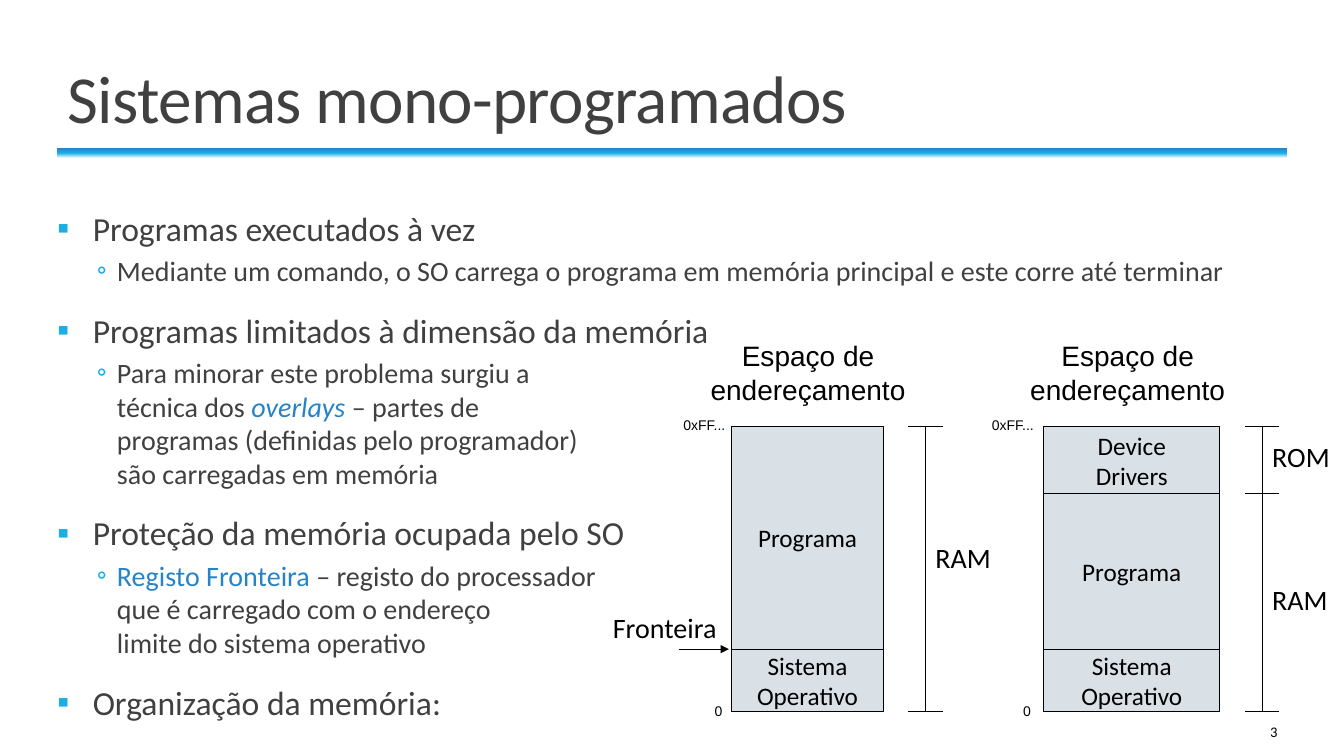
from copy import deepcopy
from dataclasses import dataclass

from pptx import Presentation
from pptx.dml.color import RGBColor
from pptx.enum import shapes, text
from pptx.oxml.ns import qn
from pptx.util import Emu, Inches, Pt


@dataclass(frozen=True)
class Theme:
    body: str = "404040"
    ink: str = "000000"
    accent: str = "1CADE4"
    strong: str = "2683C6"
    block: str = "D9E0E6"
    white: str = "FFFFFF"
    font: str = "Calibri"
    label_font: str = "Arial"
    title: float = 48
    item: float = 24
    sub: float = 20
    label: float = 20
    block_size: float = 18
    number: float = 10.5
    address: float = 10
    line: float = 0.75


T = Theme()
LEFT, CENTER, RIGHT = text.PP_ALIGN.LEFT, text.PP_ALIGN.CENTER, text.PP_ALIGN.RIGHT
MIDDLE = text.MSO_ANCHOR.MIDDLE


def rgb(color):
    return RGBColor.from_string(color)


def add_text(p, content, size=T.label, color=T.ink, font=T.font, italic=False, spacing=0):
    """Append formatted text to a paragraph, with a line break at each newline."""
    for i, part in enumerate(content.split("\n")):
        if i:
            p.add_line_break()
        r = p.add_run()
        r.text = part
        r.font.size, r.font.name, r.font.italic = Pt(size), font, italic
        r.font.color.rgb = rgb(color)
        if spacing:
            r._r.get_or_add_rPr().set("spc", str(int(spacing * 100)))


class SlideBuilder:
    def __init__(self, prs, theme):
        self.theme = theme
        self.s = prs.slides.add_slide(prs.slide_layouts[1])

    def place(self, sp, x, y, w, h):
        sp.left, sp.top, sp.width, sp.height = map(Inches, (x, y, w, h))
        sp.text_frame.auto_size = text.MSO_AUTO_SIZE.NONE
        return sp.text_frame

    def title(self, content, *box):
        tf = self.place(self.s.shapes.title, *box)
        tf.vertical_anchor = text.MSO_ANCHOR.BOTTOM
        p = tf.paragraphs[0]
        p.alignment, p.line_spacing = LEFT, 0.85
        add_text(p, content, self.theme.title, self.theme.body, spacing=-0.5)

    def bullets(self, items, *box):
        """items: (level, [(text, format), ...])"""
        t = self.theme
        tf = self.place(self.s.placeholders[1], *box)
        tf.margin_left = tf.margin_right = 0
        tf.vertical_anchor = text.MSO_ANCHOR.TOP
        # size, left margin, hanging indent, space before, space after, bullet
        levels = [(t.item, 0.35, 0.35, 12, 2, "▪"), (t.sub, 0.59, 0.2, 2, 4, "◦")]
        for i, (level, runs) in enumerate(items):
            p = tf.add_paragraph() if i else tf.paragraphs[0]
            size, margin, hang, before, after, mark = levels[level]
            p.level, p.alignment = level, LEFT
            p.space_before, p.space_after = Pt(before), Pt(after)
            pPr = p._p.get_or_add_pPr()
            pPr.set("marL", str(Inches(margin)))
            pPr.set("indent", str(-Inches(hang)))
            clr = pPr.makeelement(qn("a:buClr"), {})
            clr.append(clr.makeelement(qn("a:srgbClr"), {"val": t.accent}))
            pPr.append(clr)
            pPr.append(pPr.makeelement(qn("a:buFont"), {"typeface": t.font}))
            pPr.append(pPr.makeelement(qn("a:buChar"), {"char": mark}))
            for content, fmt in runs:
                add_text(p, content, **{"size": size, "color": t.body, **fmt})

    def rect(self, x, y, w, h):
        sp = self.s.shapes.add_shape(shapes.MSO_SHAPE.RECTANGLE, *map(Inches, (x, y, w, h)))
        sp.shadow.inherit = False
        return sp

    def rule(self, *box):
        sp = self.rect(*box)
        sp.line.fill.background()
        sp.fill.gradient()
        sp.fill.gradient_angle = 90
        first = sp.fill._fill._gradFill.find(qn("a:gsLst"))[0]
        first.addnext(deepcopy(first))
        colors = (self.theme.white, self.theme.accent, self.theme.strong)
        for i, (stop, color) in enumerate(zip(sp.fill.gradient_stops, colors)):
            stop.position = i / 2
            stop.color.rgb = rgb(color)

    def block(self, content, *box):
        sp = self.rect(*box)
        sp.fill.solid()
        sp.fill.fore_color.rgb = rgb(self.theme.block)
        sp.line.color.rgb, sp.line.width = rgb(self.theme.ink), Pt(self.theme.line)
        tf = sp.text_frame
        tf.word_wrap, tf.vertical_anchor = False, MIDDLE
        tf.paragraphs[0].alignment = CENTER
        add_text(tf.paragraphs[0], content, self.theme.block_size)

    def label(self, content, x, y, w, h, align=LEFT, wrap=True, anchor=text.MSO_ANCHOR.TOP, **fmt):
        tf = self.s.shapes.add_textbox(*map(Inches, (x, y, w, h))).text_frame
        tf.word_wrap, tf.vertical_anchor = wrap, anchor
        tf.paragraphs[0].alignment = align
        add_text(tf.paragraphs[0], content, **fmt)

    def line(self, x1, y1, x2, y2, arrow=False):
        c = self.s.shapes.add_connector(shapes.MSO_CONNECTOR.STRAIGHT, *map(Inches, (x1, y1, x2, y2)))
        c.line.color.rgb, c.line.width = rgb(self.theme.ink), Pt(self.theme.line)
        if arrow:
            ln = c.line._get_or_add_ln()
            ln.append(ln.makeelement(qn("a:tailEnd"), {"type": "triangle"}))
        spPr = c._element.spPr
        spPr.append(spPr.makeelement(qn("a:effectLst"), {}))

    def memory_map(self, x, w, heading_x, address_x, scale_x, blocks, spans):
        """blocks: (text, top, bottom); spans: (text, label top, top, bottom)."""
        t = self.theme
        self.label("Espaço de endereçamento", heading_x, 3.31, 2.67, 0.77, CENTER, font=t.label_font)
        for content, top, bottom in blocks:
            self.block(content, x, top, w, bottom - top)
        # Scale with a tick at each boundary
        edges = sorted({y for span in spans for y in span[2:]})
        self.line(scale_x, edges[0], scale_x, edges[-1])
        for y in edges:
            self.line(scale_x - 0.17, y, scale_x + 0.17, y)
        for content, label_y, _, _ in spans:
            self.label(content, scale_x, label_y, 1, 0.43)
        # First and last address
        for content, dx, y, width in (("0xFF...", 0, 4.08, 0.64), ("0", 0.31, 6.92, 0.28)):
            self.label(content, address_x + dx, y, width, 0.27, wrap=False,
                       size=t.address, font=t.label_font)


def main():
    prs = Presentation()
    prs.slide_width, prs.slide_height = Inches(13.33), Inches(7.5)
    s = SlideBuilder(prs, T)

    # Heading, rule and slide number
    s.rule(0.57, 1.47, 12.2, 0.1)
    s.title("Sistemas mono-programados", 0.57, 0.29, 12.2, 1.12)
    s.label("3", 10.83, 7.06, 1.94, 0.4, RIGHT, anchor=MIDDLE, size=T.number)

    # Bullet list
    strong = {"color": T.strong}
    s.bullets([
        (0, [("Programas executados à vez", {})]),
        (1, [("Mediante um comando, o SO carrega o programa em memória principal "
              "e este corre até terminar", {})]),
        (0, [("Programas limitados à dimensão da memória", {})]),
        (1, [("Para minorar este problema surgiu a \ntécnica dos ", {}),
             ("overlays", {**strong, "italic": True}),
             (" – partes de \nprogramas (definidas pelo programador) \n"
              "são carregadas em memória", {})]),
        (0, [("Proteção da memória ocupada pelo SO", {})]),
        (1, [("Registo Fronteira ", strong),
             ("– registo do processador\nque é carregado com o endereço\n"
              "limite do sistema operativo", {})]),
        (0, [("Organização da memória:", {})]),
    ], 0.57, 2.01, 12.2, 4.82)

    # Memory maps
    top, rom_end, border, bottom = 4.23, 4.9, 6.44, 7.06
    system = ("Sistema\nOperativo", border, bottom)
    s.memory_map(7.26, 1.5, 6.68, 6.68, 9.18,
                 [("Programa", top, border), system],
                 [("RAM", 5.31, top, bottom)])
    s.memory_map(10.35, 1.75, 9.85, 9.74, 12.52,
                 [("Device\nDrivers", top, rom_end), ("Programa", rom_end, border), system],
                 [("ROM", 4.31, top, rom_end), ("RAM", 5.73, rom_end, bottom)])

    # Border register
    s.line(6.73, border, 7.23, border, arrow=True)
    s.label("Fronteira", 5.98, 6.01, 1.5, 0.43)

    prs.save("out.pptx")


if __name__ == "__main__":
    main()
